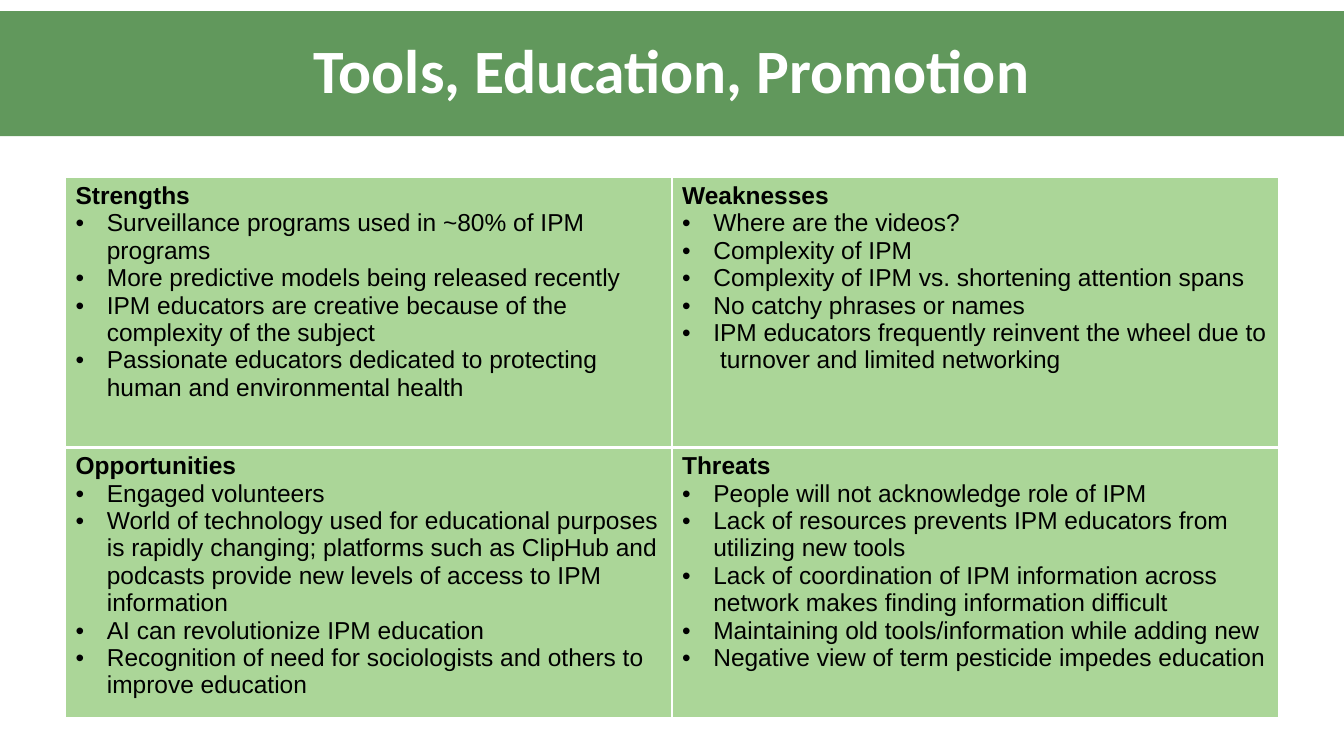
from lxml.etree import SubElement
from pptx import Presentation
from pptx.dml.color import RGBColor
from pptx.enum.shapes import MSO_SHAPE
from pptx.enum.text import MSO_ANCHOR, PP_ALIGN
from pptx.oxml import parse_xml
from pptx.oxml.ns import nsdecls, qn
from pptx.util import Pt

PX = 9144  # 100 px to the inch
COLORS = {"banner": "61985C", "cell": "83C366", "white": "FFFFFF", "text": "000000"}
CELL_OPACITY = 67
THIN, THICK = 1, 3
BULLET_INDENT = 31

SWOT = [
    [
        ("Strengths", [
            "Surveillance programs used in ~80% of IPM programs",
            "More predictive models being released recently",
            "IPM educators are creative because of the complexity of the subject",
            "Passionate educators dedicated to protecting human and environmental health",
        ]),
        ("Weaknesses", [
            "Where are the videos?",
            "Complexity of IPM",
            "Complexity of IPM vs. shortening attention spans",
            "No catchy phrases or names",
            "IPM educators frequently reinvent the wheel due to  turnover and limited networking",
        ]),
    ],
    [
        ("Opportunities", [
            "Engaged volunteers",
            "World of technology used for educational purposes is rapidly changing; platforms "
            "such as ClipHub and podcasts provide new levels of access to IPM information",
            "AI can revolutionize IPM education",
            "Recognition of need for sociologists and others to improve education",
        ]),
        ("Threats", [
            "People will not acknowledge role of IPM",
            "Lack of resources prevents IPM educators from utilizing new tools",
            "Lack of coordination of IPM information across network makes finding "
            "information difficult",
            "Maintaining old tools/information while adding new",
            "Negative view of term pesticide impedes education",
        ]),
    ],
]


def color(name):
    return RGBColor.from_string(COLORS[name])


def set_font(para, name, size, color_name, bold):
    font = para.font
    font.name, font.size, font.bold = name, Pt(size), bold
    font.color.rgb = color(color_name)


def add_banner(page, box, title):
    banner = page.shapes.add_shape(MSO_SHAPE.RECTANGLE, *(side * PX for side in box))
    banner.shadow.inherit = False
    banner.fill.solid()
    banner.fill.fore_color.rgb = color("banner")
    banner.line.fill.background()
    banner.text_frame.vertical_anchor = MSO_ANCHOR.MIDDLE
    para = banner.text_frame.paragraphs[0]
    para.text = title
    para.alignment = PP_ALIGN.CENTER
    para.line_spacing = 0.9
    set_font(para, "Calibri", 44, "white", True)


def add_bullet(para):
    props = para._p.get_or_add_pPr()
    props.set("marL", str(BULLET_INDENT * PX))
    props.set("indent", str(-BULLET_INDENT * PX))
    bullet_font = parse_xml(f'<a:buFont {nsdecls("a")} typeface="Arial"/>')
    bullet = parse_xml(f'<a:buChar {nsdecls("a")} char="•"/>')
    props.insert_element_before(bullet_font, "a:tabLst", "a:defRPr", "a:extLst")
    props.insert_element_before(bullet, "a:tabLst", "a:defRPr", "a:extLst")


def style_cell(cell, top, bottom):
    """Fill the cell with translucent green and draw its white borders."""
    cell.fill.solid()
    cell.fill.fore_color.rgb = color("cell")
    props = cell._tc.get_or_add_tcPr()
    green = props.find(f"{qn('a:solidFill')}/{qn('a:srgbClr')}")
    SubElement(green, qn("a:alpha"), val=str(CELL_OPACITY * 1000))
    widths = {"lnL": THIN, "lnR": THIN, "lnT": top, "lnB": bottom}
    for place, (tag, width) in enumerate(widths.items()):
        props.insert(place, parse_xml(
            f'<a:{tag} {nsdecls("a")} w="{Pt(width)}"><a:solidFill>'
            f'<a:srgbClr val="{COLORS["white"]}"/></a:solidFill></a:{tag}>'))


def fill_cell(cell, heading, points):
    frame = cell.text_frame
    for index, text in enumerate([heading, *points]):
        para = frame.add_paragraph() if index else frame.paragraphs[0]
        para.text = text
        set_font(para, "Arial", 17.5, "text", index == 0)
        if index:
            add_bullet(para)


def add_swot_table(page, box, rows):
    table = page.shapes.add_table(
        len(rows), len(rows[0]), *(side * PX for side in box)).table
    table.first_row = table.horz_banding = False
    for row_index, row in enumerate(rows):
        top = THICK if row_index else THIN
        bottom = THICK if row_index < len(rows) - 1 else THIN
        for column_index, (heading, points) in enumerate(row):
            cell = table.cell(row_index, column_index)
            fill_cell(cell, heading, points)
            style_cell(cell, top, bottom)


def main():
    deck = Presentation()
    deck.slide_width, deck.slide_height = 1333 * PX, 750 * PX
    page = deck.slides.add_slide(deck.slide_layouts[6])
    add_swot_table(page, (65, 176, 1203, 536), SWOT)
    add_banner(page, (0, 11, 1333, 124), "Tools, Education, Promotion")
    deck.save("out.pptx")


if __name__ == "__main__":
    main()
